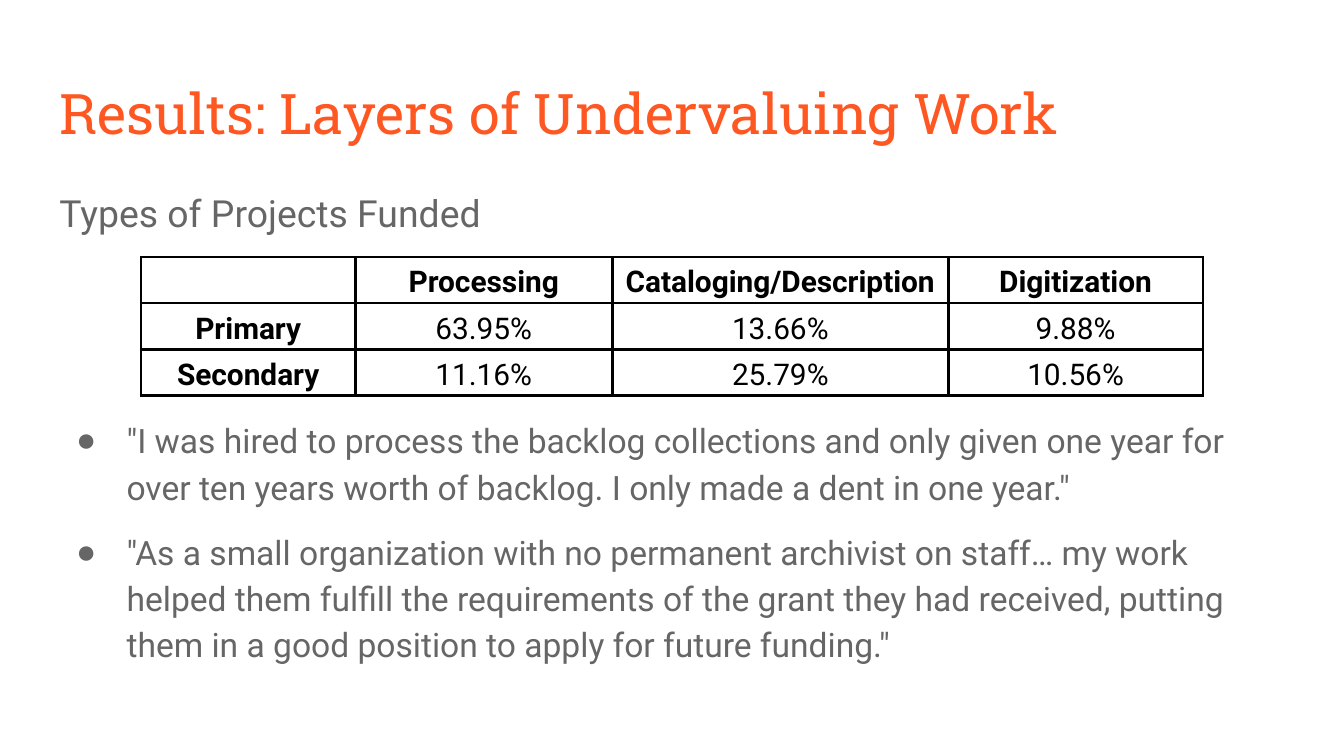
from lxml import etree
from pptx import Presentation
from pptx.dml.color import RGBColor
from pptx.enum.text import MSO_ANCHOR, PP_ALIGN
from pptx.oxml.ns import qn
from pptx.util import Emu, Pt

CENTER = PP_ALIGN.CENTER
MIDDLE = MSO_ANCHOR.MIDDLE
SCALE = 5715
BLANK_LAYOUT = 6


def px(length):
    return Emu(length * SCALE)


def color(value):
    return RGBColor.from_string(value)


def add_color(parent, tag, value):
    holder = etree.SubElement(parent, qn(tag))
    etree.SubElement(holder, qn("a:srgbClr"), val=value)


class SlideBuilder:
    heading_font = "Roboto Slab"
    body_font = "Roboto"
    bullet_font = "Arial"
    accent = "FF5722"
    gray = "666666"
    black = "000000"
    white = "FFFFFF"
    line_spacing = 1.15

    def __init__(self, deck):
        self.page = deck.slides.add_slide(deck.slide_layouts[BLANK_LAYOUT])
        self.page.background.fill.solid()
        self.page.background.fill.fore_color.rgb = color(self.white)

    def style(self, para, size, font, ink, bold=False):
        for span in para.runs:
            span.font.size = Pt(size)
            span.font.name = font
            span.font.bold = bold
            span.font.color.rgb = color(ink)

    def text_box(self, left, top, width, height, text):
        box = self.page.shapes.add_textbox(px(left), px(top), px(width), px(height))
        frame = box.text_frame
        frame.word_wrap = True
        frame.margin_left = frame.margin_right = px(16)
        frame.margin_top = frame.margin_bottom = px(16)
        frame.text = text
        return frame

    def title(self, left, top, width, height, text):
        frame = self.text_box(left, top, width, height, text)
        self.style(frame.paragraphs[0], 30, self.heading_font, self.accent)

    def subtitle(self, left, top, width, height, text):
        para = self.text_box(left, top, width, height, text).paragraphs[0]
        para.line_spacing = self.line_spacing
        self.style(para, 20, self.body_font, self.gray)

    def bullets(self, left, top, width, height, items):
        frame = self.text_box(left, top, width, height, "\n".join(items))
        for index, para in enumerate(frame.paragraphs):
            para.line_spacing = self.line_spacing
            para.space_before = Pt(10 if index else 0)
            self.style(para, 18, self.body_font, self.gray)
            properties = para._p.get_or_add_pPr()
            properties.set("marL", str(px(80)))
            properties.set("indent", str(px(-60)))
            add_color(properties, "a:buClr", self.gray)
            etree.SubElement(properties, qn("a:buFont"), typeface=self.bullet_font)
            etree.SubElement(properties, qn("a:buChar"), char="●")

    def borders(self, cell):
        properties = cell._tc.get_or_add_tcPr()
        for side in ("lnL", "lnR", "lnT", "lnB"):
            line = etree.SubElement(properties, qn(f"a:{side}"), w=str(Pt(1.5)))
            add_color(line, "a:solidFill", self.black)

    def cell(self, cell, text, bold):
        cell.margin_left = cell.margin_right = px(5)
        cell.margin_top = cell.margin_bottom = px(3)
        cell.vertical_anchor = MIDDLE
        self.borders(cell)
        if bold:
            cell.fill.background()
        else:
            cell.fill.solid()
            cell.fill.fore_color.rgb = color(self.white)
        para = cell.text_frame.paragraphs[0]
        if text:
            para.text = text
            para.alignment = CENTER
            para.line_spacing = self.line_spacing
            self.style(para, 16, self.body_font, self.black, bold)
        else:
            etree.SubElement(para._p, qn("a:endParaRPr"), sz="1600")

    def table(self, left, top, widths, row_height, rows):
        frame = self.page.shapes.add_table(
            len(rows), len(widths), px(left), px(top),
            px(sum(widths)), px(row_height * len(rows)))
        table = frame.table
        for column, width in zip(table.columns, widths):
            column.width = px(width)
        for row_index, values in enumerate(rows):
            for column_index, value in enumerate(values):
                is_header = row_index == 0 or column_index == 0
                self.cell(table.cell(row_index, column_index), value, is_header)


def main():
    deck = Presentation()
    deck.slide_width = px(1600)
    deck.slide_height = px(900)
    slide = SlideBuilder(deck)
    slide.title(55, 78, 1491, 101, "Results: Layers of Undervaluing Work")
    slide.subtitle(55, 202, 1491, 90, "Types of Projects Funded")
    slide.bullets(55, 477, 1491, 376, [
        '"I was hired to process the backlog collections and only given one year '
        'for over ten years worth of backlog. I only made a dent in one year."',
        '"As a small organization with no permanent archivist on staff… my work '
        'helped them fulfill the requirements of the grant they had received, '
        'putting them in a good position to apply for future funding."',
    ])
    slide.table(168, 306, [255, 306, 400, 303], 48, [
        ["", "Processing", "Cataloging/Description", "Digitization"],
        ["Primary", "63.95%", "13.66%", "9.88%"],
        ["Secondary", "11.16%", "25.79%", "10.56%"],
    ])
    deck.save("out.pptx")


if __name__ == "__main__":
    main()
